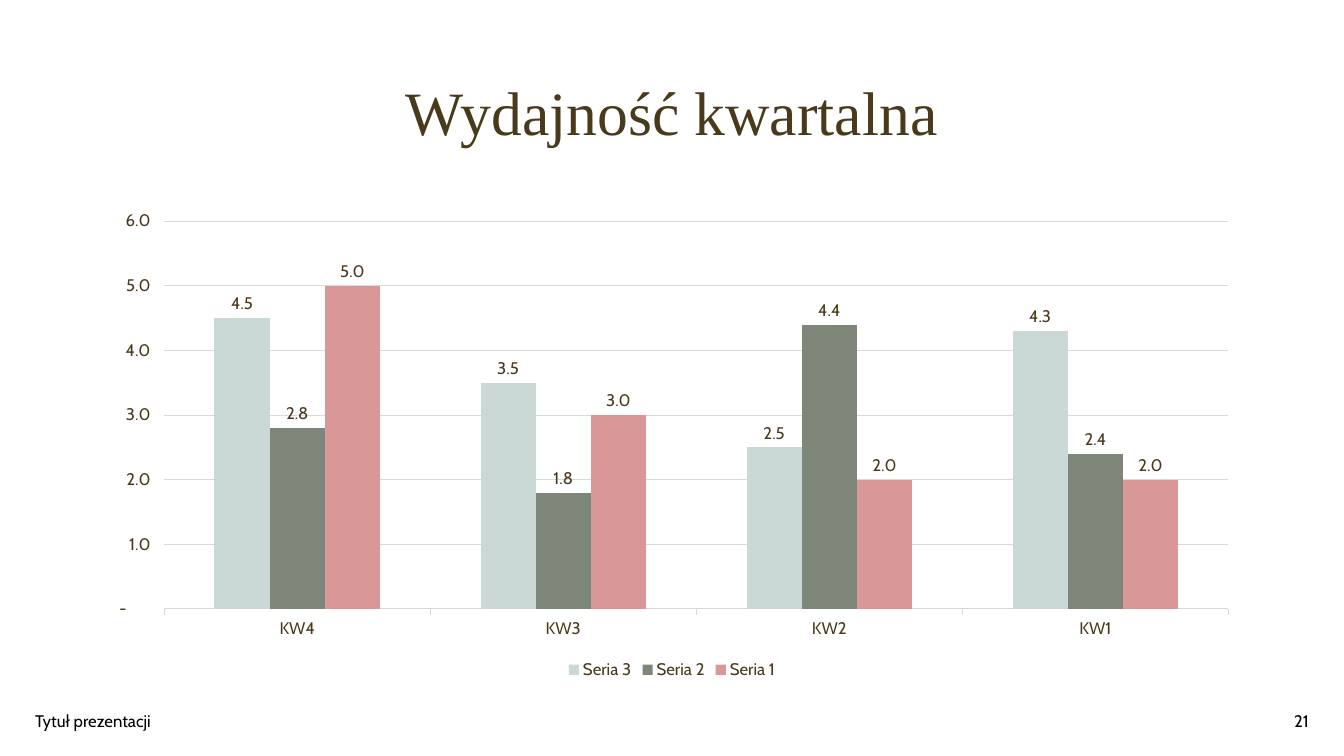
import pptx
import pptx.chart.data
import pptx.dml.color
import pptx.enum.chart
import pptx.enum.text
import pptx.util

COLORS = {
    "title": "4A3A1C",
    "footer": "000000",
    "rule": "D9D9D9",
    "Seria 3": "CAD8D6",
    "Seria 2": "7E8679",
    "Seria 1": "D99797",
}
QUARTERS = ["KW4", "KW3", "KW2", "KW1"]
SERIES = {
    "Seria 3": (4.5, 3.5, 2.5, 4.3),
    "Seria 2": (2.8, 1.8, 4.4, 2.4),
    "Seria 1": (5, 3, 2, 2),
}
NUMBER_FORMAT = r'_(* #,##0.0_);_(* \(#,##0.0\);_(* "-"??_);_(@_)'
ALIGN = pptx.enum.text.PP_ALIGN


class SlideBuilder:
    COLUMNS, ROWS = 160, 90
    HEADING, BODY = "Times New Roman", "Cabin"

    def __init__(self, prs):
        self.prs = prs
        self.s = prs.slides.add_slide(prs.slide_layouts[6])

    def box(self, col, row, cols, rows):
        x = self.prs.slide_width / self.COLUMNS
        y = self.prs.slide_height / self.ROWS
        return round(col * x), round(row * y), round(cols * x), round(rows * y)

    def color(self, name):
        return pptx.dml.color.RGBColor.from_string(COLORS[name])

    def style(self, font, color, size=12, name=BODY):
        font.name = name
        font.size = pptx.util.Pt(size)
        font.color.rgb = self.color(color)

    def rule(self, line):
        line.color.rgb = self.color("rule")
        line.width = pptx.util.Pt(0.75)

    def text(self, words, place, color, align=ALIGN.LEFT, size=12, name=BODY, spacing=1.0):
        tf = self.s.shapes.add_textbox(*self.box(*place)).text_frame
        tf.word_wrap = True
        tf.vertical_anchor = pptx.enum.text.MSO_ANCHOR.MIDDLE
        p = tf.paragraphs[0]
        p.text = words
        p.alignment = align
        p.line_spacing = spacing
        self.style(p.font, color, size, name)

    def column_chart(self, categories, series, place):
        enums = pptx.enum.chart
        data = pptx.chart.data.CategoryChartData(number_format=NUMBER_FORMAT)
        data.categories = categories
        for name, values in series.items():
            data.add_series(name, values)
        chart = self.s.shapes.add_chart(
            enums.XL_CHART_TYPE.COLUMN_CLUSTERED, *self.box(*place), data
        ).chart
        self.style(chart.font, "footer", 10)
        chart.has_title = False
        chart.has_legend = True
        chart.legend.position = enums.XL_LEGEND_POSITION.BOTTOM
        chart.legend.include_in_layout = False
        self.style(chart.legend.font, "title")

        for axis in (chart.category_axis, chart.value_axis):
            axis.major_tick_mark = enums.XL_TICK_MARK.OUTSIDE
            self.style(axis.tick_labels.font, "title")
        self.rule(chart.category_axis.format.line)
        values = chart.value_axis
        values.minimum_scale, values.maximum_scale, values.major_unit = 0, 6, 1
        values.format.line.fill.background()
        values.has_major_gridlines = True
        self.rule(values.major_gridlines.format.line)
        values.tick_labels.number_format = NUMBER_FORMAT
        values.tick_labels.number_format_is_linked = False

        plot = chart.plots[0]
        plot.gap_width = 182
        plot.overlap = 0
        plot.vary_by_categories = False
        for bars in plot.series:
            bars.format.fill.solid()
            bars.format.fill.fore_color.rgb = self.color(bars.name)
            labels = bars.data_labels
            labels.show_value = True
            labels.position = enums.XL_LABEL_POSITION.OUTSIDE_END
            labels.number_format = NUMBER_FORMAT
            labels.number_format_is_linked = False
            self.style(labels.font, "title")


def main():
    prs = pptx.Presentation()
    prs.slide_width = pptx.util.Inches(13.33)
    prs.slide_height = pptx.util.Inches(7.5)
    slide = SlideBuilder(prs)
    slide.text("Wydajność kwartalna", (11, 5, 138, 17.4), "title",
               ALIGN.CENTER, 44, slide.HEADING, 0.9)
    slide.column_chart(QUARTERS, SERIES, (11, 24, 138, 57.4))
    slide.text("Tytuł prezentacji", (3, 83.4, 54, 4.8), "footer")
    slide.text("21", (121, 83.4, 36, 4.8), "footer", ALIGN.RIGHT)
    prs.save("out.pptx")


if __name__ == "__main__":
    main()
